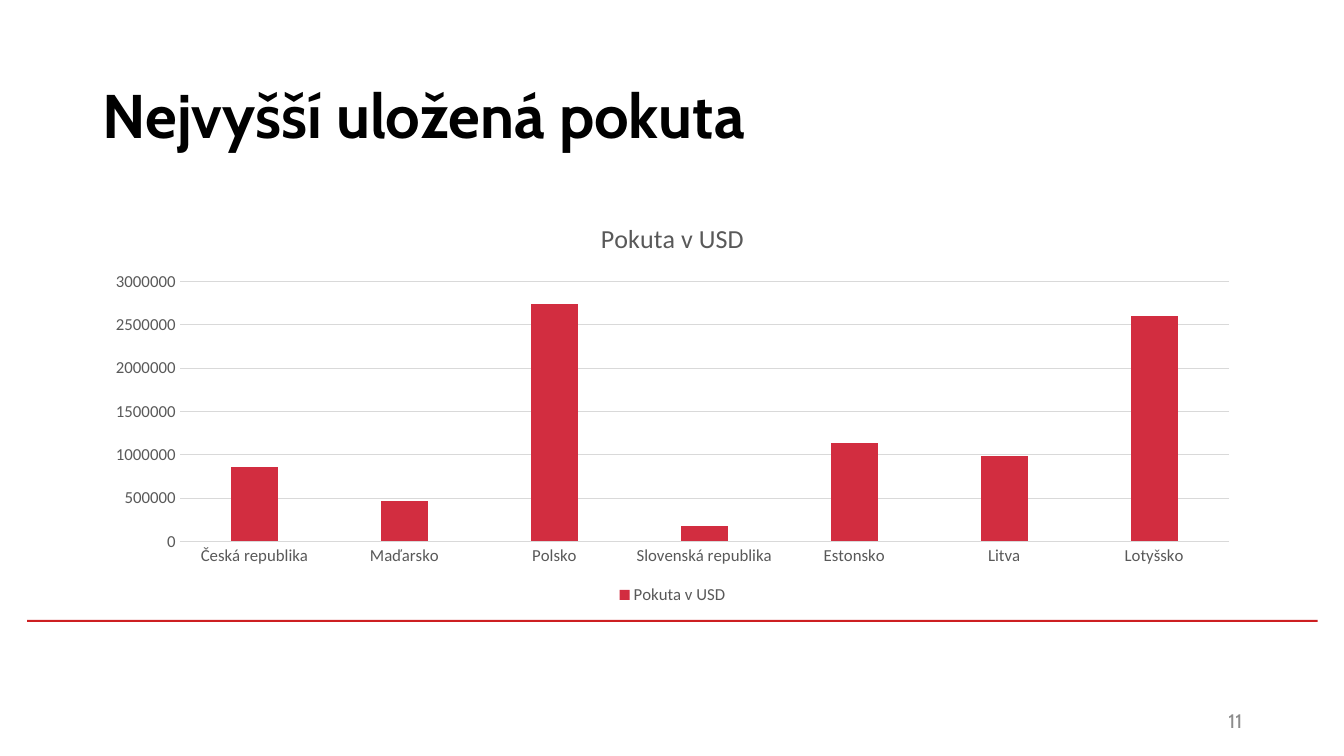
from pptx import Presentation
from pptx.chart.data import CategoryChartData
from pptx.dml.color import RGBColor
from pptx.enum.chart import XL_CHART_TYPE as ChartType, XL_LEGEND_POSITION as LegendPosition, XL_TICK_MARK as TickMark
from pptx.enum.shapes import MSO_SHAPE as Shape
from pptx.enum.text import MSO_ANCHOR as Anchor, PP_ALIGN as Align
from pptx.util import Inches, Pt

BLACK = RGBColor(0x00, 0x00, 0x00)
RULE_RED = RGBColor(0xCD, 0x1F, 0x21)
BAR_RED = RGBColor(0xD2, 0x2D, 0x40)
LABEL_GREY = RGBColor(0x59, 0x59, 0x59)
GRID_GREY = RGBColor(0xD9, 0xD9, 0xD9)
NUMBER_GREY = RGBColor(0x8C, 0x8C, 0x8C)

SERIES_NAME = "Pokuta v USD"
FINES = {
    "Česká republika": 860000,
    "Maďarsko": 470000,
    "Polsko": 2740000,
    "Slovenská republika": 180000,
    "Estonsko": 1140000,
    "Litva": 990000,
    "Lotyšsko": 2600000,
}


def style_font(font, size, color, name="Calibri", bold=False):
    """Set the size, colour, typeface and weight of a font."""
    font.size = Pt(size)
    font.color.rgb = color
    font.name = name
    font.bold = bold


def style_line(line):
    """Give a chart line the thin grey look."""
    line.color.rgb = GRID_GREY
    line.width = Pt(0.75)


def add_text(slide, box, text, size, color, align=Align.LEFT, bold=False):
    """Add one vertically centred line of text."""
    frame = slide.shapes.add_textbox(*map(Inches, box)).text_frame
    frame.word_wrap = True
    frame.vertical_anchor = Anchor.MIDDLE
    paragraph = frame.paragraphs[0]
    paragraph.alignment = align
    run = paragraph.add_run()
    run.text = text
    style_font(run.font, size, color, "Cabin", bold)


def add_rule(slide, box):
    """Add the thin red rule across the slide."""
    rule = slide.shapes.add_shape(Shape.RECTANGLE, *map(Inches, box))
    rule.shadow.inherit = False
    rule.fill.solid()
    rule.fill.fore_color.rgb = RULE_RED
    rule.line.fill.background()


def add_fines_chart(slide, box):
    """Add the column chart of the highest fine per country."""
    fines = CategoryChartData()
    fines.categories = list(FINES)
    fines.add_series(SERIES_NAME, list(FINES.values()))
    chart = slide.shapes.add_chart(ChartType.COLUMN_CLUSTERED, *map(Inches, box), fines).chart
    style_font(chart.font, 10, BLACK)

    chart.has_title = True
    heading = chart.chart_title.text_frame.paragraphs[0].add_run()
    heading.text = SERIES_NAME
    style_font(heading.font, 18.6, LABEL_GREY)

    chart.has_legend = True
    chart.legend.position = LegendPosition.BOTTOM
    chart.legend.include_in_layout = False
    style_font(chart.legend.font, 12, LABEL_GREY)

    countries, amounts = chart.category_axis, chart.value_axis
    for axis in (countries, amounts):
        axis.major_tick_mark = axis.minor_tick_mark = TickMark.NONE
        style_font(axis.tick_labels.font, 12, LABEL_GREY)
    style_line(countries.format.line)
    amounts.format.line.fill.background()
    amounts.minimum_scale = 0
    amounts.maximum_scale = 3000000
    amounts.major_unit = 500000
    style_line(amounts.major_gridlines.format.line)

    plot = chart.plots[0]
    plot.vary_by_categories = False
    plot.gap_width = 219
    plot.overlap = -27
    bars = plot.series[0].format.fill
    bars.solid()
    bars.fore_color.rgb = BAR_RED


def main():
    """Build the slide and save it."""
    deck = Presentation()
    deck.slide_width, deck.slide_height = Inches(13.33), Inches(7.5)
    slide = deck.slides.add_slide(deck.slide_layouts[6])
    add_rule(slide, (0.27, 6.15, 12.8, 0.02))
    add_text(slide, (0.92, 0.4, 11.5, 1.45), "Nejvyšší uložená pokuta", 44, BLACK, bold=True)
    add_fines_chart(slide, (0.92, 2, 11.5, 4.04))
    add_text(slide, (9.42, 6.95, 3, 0.4), "11", 14, NUMBER_GREY, Align.RIGHT)
    deck.save("out.pptx")


if __name__ == "__main__":
    main()
